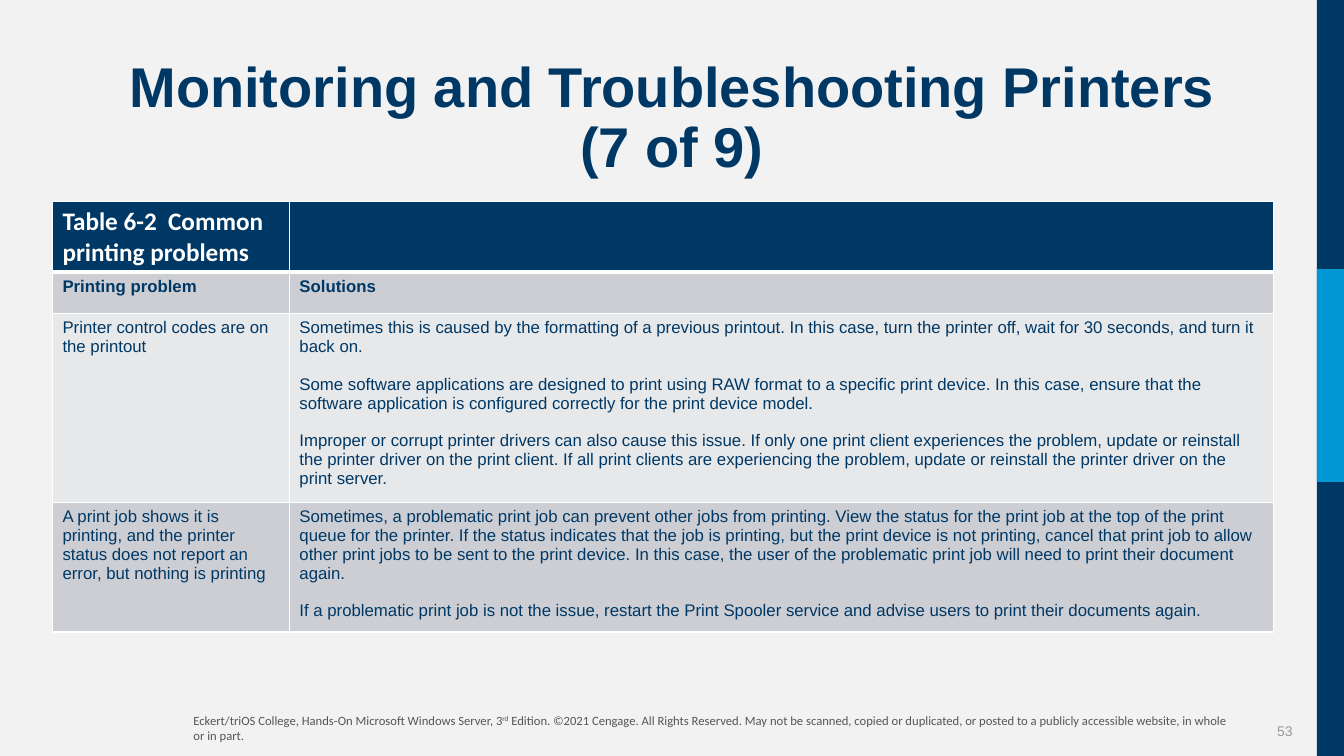
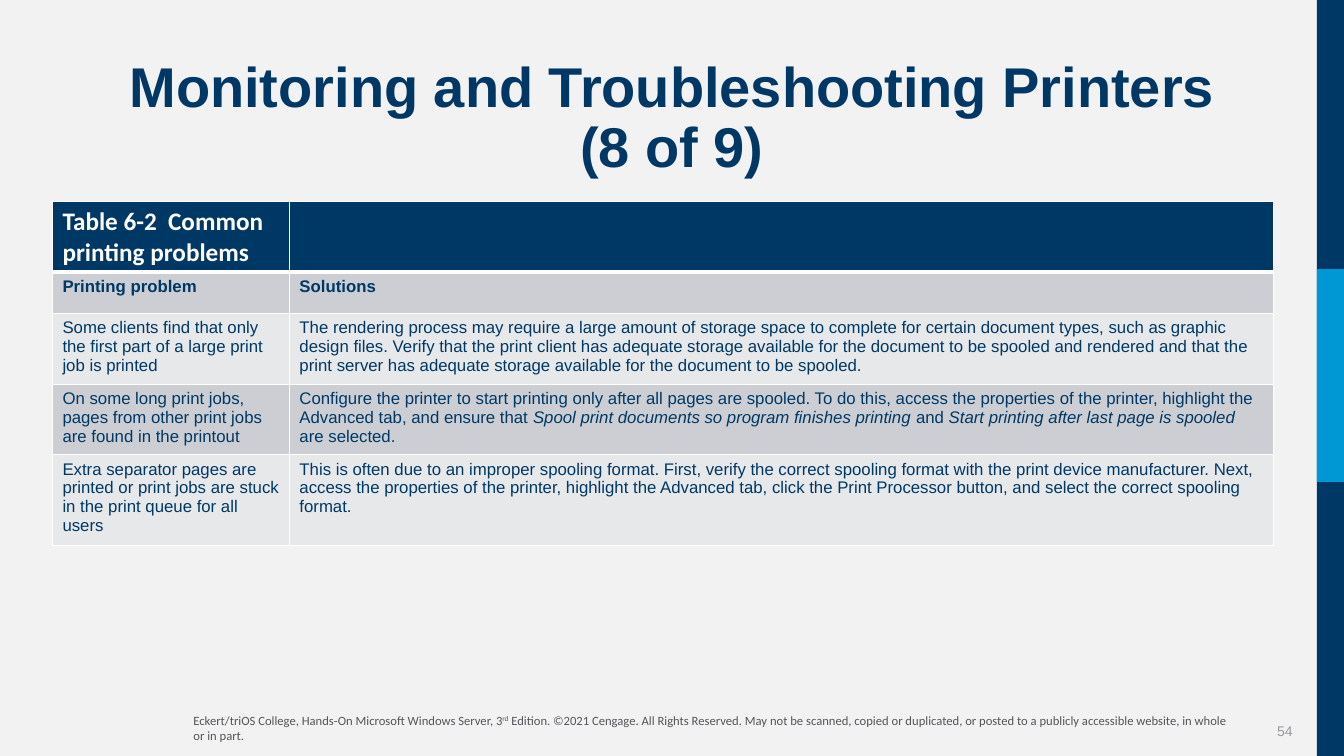
"""Build two table slides on common printing problems."""
from dataclasses import dataclass

from lxml import etree
from pptx import Presentation
from pptx.dml.color import RGBColor
from pptx.enum import shapes, text as tx
from pptx.oxml import ns
from pptx.util import Inches, Pt

COLORS = {
    "page": "F2F2F2",
    "navy": "003865",
    "blue": "0098D4",
    "white": "FFFFFF",
    "dark_band": "CCCED3",
    "light_band": "E7E8EA",
    "number": "96999E",
    "footer": "53565A",
}
TITLE = "Monitoring and Troubleshooting Printers\n({} of 9)"
FOOTER = (
    "Eckert/triOS College, Hands-On Microsoft Windows Server, 3^rd^ Edition. "
    "©2021 Cengage. All Rights Reserved. May not be scanned, copied or duplicated, "
    "or posted to a publicly accessible website, in whole or in part."
)
CAPTION = "Table 6-2  Common printing problems"
HEADINGS = ("Printing problem", "Solutions")
COLUMN_WIDTHS = (2.35, 9.76)
ROW_HEIGHT = 0.41
PARAGRAPH_GAP = 13.4


@dataclass(frozen=True)
class Band:
    top: float
    height: float
    color: str


@dataclass(frozen=True)
class Problem:
    name: str
    solutions: tuple[str, ...]


@dataclass(frozen=True)
class Page:
    number: int
    position: int
    problems: tuple[Problem, ...]


BANDS = (Band(0, 7.5, "navy"), Band(2.67, 2.11, "blue"))
PAGES = (
    Page(53, 7, (
        Problem("Printer control codes are on the printout", (
            "Sometimes this is caused by the formatting of a previous printout. In this "
            "case, turn the printer off, wait for 30 seconds, and turn it back on.",
            "Some software applications are designed to print using RAW format to a "
            "specific print device. In this case, ensure that the software application is "
            "configured correctly for the print device model.",
            "Improper or corrupt printer drivers can also cause this issue. If only one "
            "print client experiences the problem, update or reinstall the printer driver "
            "on the print client. If all print clients are experiencing the problem, "
            "update or reinstall the printer driver on the print server.",
        )),
        Problem(
            "A print job shows it is printing, and the printer status does not report an "
            "error, but nothing is printing", (
                "Sometimes, a problematic print job can prevent other jobs from printing. "
                "View the status for the print job at the top of the print queue for the "
                "printer. If the status indicates that the job is printing, but the print "
                "device is not printing, cancel that print job to allow other print jobs "
                "to be sent to the print device. In this case, the user of the problematic "
                "print job will need to print their document again.",
                "If a problematic print job is not the issue, restart the Print Spooler "
                "service and advise users to print their documents again.",
            )),
    )),
    Page(54, 8, (
        Problem("Some clients find that only the first part of a large print job is printed", (
            "The rendering process may require a large amount of storage space to complete "
            "for certain document types, such as graphic design files. Verify that the "
            "print client has adequate storage available for the document to be spooled "
            "and rendered and that the print server has adequate storage available for "
            "the document to be spooled.",
        )),
        Problem("On some long print jobs, pages from other print jobs are found in the printout", (
            "Configure the printer to start printing only after all pages are spooled. To "
            "do this, access the properties of the printer, highlight the Advanced tab, "
            "and ensure that *Spool print documents so program finishes printing *and "
            "*Start printing after last page is spooled *are selected.",
        )),
        Problem(
            "Extra separator pages are printed or print jobs are stuck in the print queue "
            "for all users", (
                "This is often due to an improper spooling format. First, verify the correct "
                "spooling format with the print device manufacturer. Next, access the "
                "properties of the printer, highlight the Advanced tab, click the Print "
                "Processor button, and select the correct spooling format.",
            )),
    )),
)


def rgb(name: str) -> RGBColor:
    return RGBColor.from_string(COLORS[name])


def write(p, text: str, *, size: float = 12, font: str = "Arial", color: str = "navy",
          bold: bool = False, align=tx.PP_ALIGN.LEFT) -> None:
    """Write text in a paragraph, with *italic* and ^superscript^ pieces."""
    p.alignment = align
    for row, line in enumerate(text.split("\n")):
        if row:
            p.add_line_break()
            etree.SubElement(p._p[-1], ns.qn("a:rPr"), sz=str(int(size * 100)))
        for i, phrase in enumerate(line.split("*")):
            for j, piece in enumerate(phrase.split("^")):
                if not piece:
                    continue
                r = p.add_run()
                r.text = piece
                r.font.name, r.font.size = font, Pt(size)
                r.font.bold, r.font.italic = bold, i % 2 == 1
                r.font.color.rgb = rgb(color)
                if j % 2:
                    r._r.get_or_add_rPr().set("baseline", "30000")


def add_label(s, left: float, top: float, width: float, text: str,
              anchor=tx.MSO_ANCHOR.TOP, **style) -> None:
    sp = s.shapes.add_textbox(Inches(left), Inches(top), Inches(width), Inches(0.4))
    tf = sp.text_frame
    tf.word_wrap = True
    tf.vertical_anchor = anchor
    write(tf.paragraphs[0], text, **style)


def add_frame(s, page: Page) -> None:
    add_label(s, 12.12, 7.05, 0.8, str(page.number), tx.MSO_ANCHOR.MIDDLE,
              size=10, color="number", align=tx.PP_ALIGN.RIGHT)
    add_label(s, 1.82, 7.02, 10.51, FOOTER, size=9, font="Calibri", color="footer")
    for band in BANDS:
        sp = s.shapes.add_shape(shapes.MSO_SHAPE.RECTANGLE, Inches(13.06), Inches(band.top),
                                Inches(0.28), Inches(band.height))
        sp.shadow.inherit = False
        sp.fill.solid()
        sp.fill.fore_color.rgb = rgb(band.color)
        sp.line.fill.background()


def add_title(s, position: int) -> None:
    sp = s.shapes.title
    sp.left, sp.top, sp.width, sp.height = map(Inches, (0.52, 0.52, 12.29, 1.33))
    tf = sp.text_frame
    tf.word_wrap = True
    tf.auto_size = tx.MSO_AUTO_SIZE.NONE
    tf.vertical_anchor = tx.MSO_ANCHOR.MIDDLE
    p = tf.paragraphs[0]
    p.line_spacing = 0.9
    write(p, TITLE.format(position), size=40, bold=True, align=tx.PP_ALIGN.CENTER)


def style_cell(cell, fill: str, top: float = 1, bottom: float = 1) -> None:
    tc_pr = cell._tc.get_or_add_tcPr()
    for side, width in (("L", 1), ("R", 1), ("T", top), ("B", bottom)):
        ln = etree.SubElement(tc_pr, ns.qn(f"a:ln{side}"), w=str(Pt(width)))
        solid = etree.SubElement(ln, ns.qn("a:solidFill"))
        etree.SubElement(solid, ns.qn("a:srgbClr"), val=COLORS["white"])
    cell.fill.solid()
    cell.fill.fore_color.rgb = rgb(fill)


def fill_cell(cell, paragraphs: tuple[str, ...], **style) -> None:
    tf = cell.text_frame
    for i, text in enumerate(paragraphs):
        p = tf.add_paragraph() if i else tf.paragraphs[0]
        if i:
            p.space_before = Pt(PARAGRAPH_GAP)
        write(p, text, **style)


def add_problem_table(s, problems: tuple[Problem, ...]) -> None:
    rows = len(problems) + 2
    table = s.shapes.add_table(rows, 2, Inches(0.52), Inches(2), Inches(sum(COLUMN_WIDTHS)),
                               Inches(ROW_HEIGHT * rows)).table
    for column, width in zip(table.columns, COLUMN_WIDTHS):
        column.width = Inches(width)
    for i, row in enumerate(table.rows):
        row.height = Inches(ROW_HEIGHT)
        fill = "navy" if i == 0 else "dark_band" if i % 2 else "light_band"
        for cell in row.cells:
            style_cell(cell, fill, top=3 if i == 1 else 1, bottom=3 if i == 0 else 1)
    fill_cell(table.cell(0, 0), (CAPTION,), size=18, font="Calibri", color="white", bold=True)
    for j, heading in enumerate(HEADINGS):
        fill_cell(table.cell(1, j), (heading,), bold=True)
    for i, problem in enumerate(problems, start=2):
        fill_cell(table.cell(i, 0), (problem.name,))
        fill_cell(table.cell(i, 1), problem.solutions)


def main() -> None:
    prs = Presentation()
    prs.slide_width, prs.slide_height = Inches(13.33), Inches(7.5)
    background = prs.slide_master.background.fill
    background.solid()
    background.fore_color.rgb = rgb("page")
    for page in PAGES:
        s = prs.slides.add_slide(prs.slide_layouts[5])
        add_frame(s, page)
        add_title(s, page.position)
        add_problem_table(s, page.problems)
    prs.save("out.pptx")


if __name__ == "__main__":
    main()
